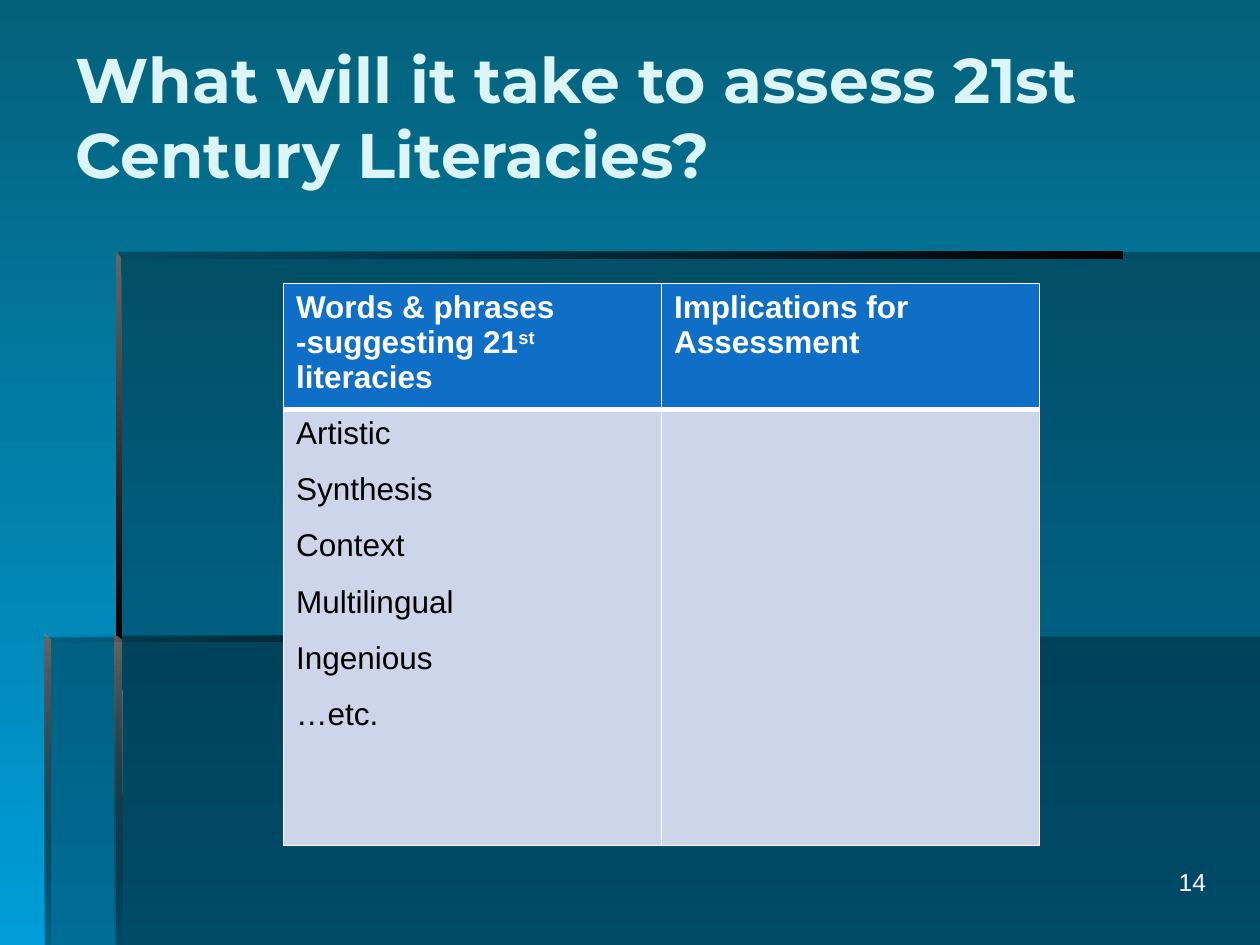
from lxml.etree import SubElement
from pptx import Presentation
from pptx.dml.color import RGBColor
from pptx.enum.text import MSO_ANCHOR, PP_ALIGN
from pptx.oxml.ns import qn
from pptx.util import Inches, Pt

WHITE, BLACK, GREY = "FFFFFF", "000000", "666666"
HEADER_BLUE, BODY_BLUE = "0F6FC6", "CCD5EA"
DOWN, ACROSS = 270, 0

PANELS = [
    [(0.92, 5.05), (0.92, 7.5), (10, 7.5), (10, 5.05)],
    [(0.94, 5.06), (0.36, 5.06), (0.36, 7.5), (10, 7.5), (10, 2), (0.94, 2)],
]
EDGES = [
    ([(0.92, 2), (0.92, 2.05), (8.91, 2.05), (8.91, 2)], BLACK, ACROSS, (0, 100)),
    ([(0.92, 2), (0.92, 5.1), (0.97, 5.1), (0.96, 2.04)], GREY, DOWN, (100, 100)),
    ([(0.91, 7.5), (0.97, 7.5), (0.96, 5.08), (0.91, 5.04)], GREY, DOWN, (100, 0)),
    ([(0.35, 5.04), (0.35, 5.09), (5.35, 5.09), (5.35, 5.04)], BLACK, ACROSS, (0, 100)),
    ([(0.35, 5.04), (0.35, 7.5), (0.4, 7.5), (0.4, 5.09)], GREY, DOWN, (100, 10)),
]
HEADINGS = [
    [("Words & phrases -suggesting 21", 0), ("st ", 30), ("literacies", 0)],
    [("Implications for Assessment", 0)],
]
LITERACIES = ["Artistic", "Synthesis", "Context", "Multilingual", "Ingenious", "…etc."]


def rgb(color):
    return RGBColor.from_string(color)


def fill_solid(fill, color):
    fill.solid()
    fill.fore_color.rgb = rgb(color)


def fill_gradient(fill, colors, angle):
    fill.gradient()
    fill.gradient_angle = angle
    for stop, color, position in zip(fill.gradient_stops, colors, (0, 1)):
        stop.color.rgb = rgb(color)
        stop.position = position


def set_opacity(shape, percents):
    for color, percent in zip(shape._element.spPr.iter(qn("a:srgbClr")), percents):
        SubElement(color, qn("a:alpha"), val=str(percent * 1000))


def add_outline(slide, points):
    corners = [(Inches(x), Inches(y)) for x, y in points]
    builder = slide.shapes.build_freeform(*corners[0])
    builder.add_line_segments(corners[1:], close=True)
    outline = builder.convert_to_shape()
    outline.shadow.inherit = False
    outline.line.fill.background()
    return outline


def add_panel(slide, points):
    panel = add_outline(slide, points)
    fill_solid(panel.fill, BLACK)
    set_opacity(panel, [30])


def add_edge(slide, points, start, angle, opacities):
    edge = add_outline(slide, points)
    fill_gradient(edge.fill, (start, BLACK), angle)
    set_opacity(edge, opacities)


def add_run(paragraph, text, color, baseline=0, **font):
    run = paragraph.add_run()
    run.text = text
    run.font.color.rgb = rgb(color)
    for name, value in {"name": "Arial", "size": Pt(18), "bold": False, **font}.items():
        setattr(run.font, name, value)
    if baseline:
        run._r.get_or_add_rPr().set("baseline", str(baseline * 1000))


def add_label(slide, box, text, color, anchor, align, **font):
    label = slide.shapes.add_textbox(*map(Inches, box)).text_frame
    label.word_wrap = True
    label.vertical_anchor = anchor
    label.paragraphs[0].alignment = align
    add_run(label.paragraphs[0], text, color, **font)


def style_cell(cell, color, borders):
    properties = cell._tc.get_or_add_tcPr()
    for side, width in borders.items():
        border = SubElement(properties, qn(f"a:ln{side}"), w=str(Pt(width)))
        line_fill = SubElement(border, qn("a:solidFill"))
        SubElement(line_fill, qn("a:srgbClr"), val=WHITE)
    fill_solid(cell.fill, color)


def add_literacies_table(slide):
    frame = slide.shapes.add_table(2, 2, *map(Inches, (2.25, 2.25, 6, 4.33)))
    table = frame.table
    for row, height in zip(table.rows, (0.87, 3.46)):
        row.height = Inches(height)
    thin = dict.fromkeys("LRTB", 1)
    for column, heading in enumerate(HEADINGS):
        header, body = table.cell(0, column), table.cell(1, column)
        style_cell(header, HEADER_BLUE, {**thin, "B": 3})
        style_cell(body, BODY_BLUE, {**thin, "T": 3})
        for text, baseline in heading:
            add_run(header.text_frame.paragraphs[0], text, WHITE, baseline, bold=True)
    table.cell(0, 0).text_frame.paragraphs[0].space_after = Pt(12)
    words = table.cell(1, 0).text_frame
    for index, literacy in enumerate(LITERACIES):
        paragraph = words.add_paragraph() if index else words.paragraphs[0]
        paragraph.space_after = Pt(12)
        add_run(paragraph, literacy, BLACK)


def main():
    deck = Presentation()
    deck.slide_width, deck.slide_height = Inches(10), Inches(7.5)
    slide = deck.slides.add_slide(deck.slide_layouts[6])
    fill_gradient(slide.background.fill, ("04617B", "009DD9"), DOWN)
    for points in PANELS:
        add_panel(slide, points)
    for edge in EDGES:
        add_edge(slide, *edge)
    add_label(slide, (0.5, 0.3, 8.75, 1.27),
              "What will it take to assess 21st Century Literacies?", "DBF5F9",
              MSO_ANCHOR.BOTTOM, PP_ALIGN.LEFT,
              name="Montserrat", size=Pt(36), bold=True)
    add_literacies_table(slide)
    add_label(slide, (7.59, 6.83, 2.08, 0.52), "14", WHITE,
              MSO_ANCHOR.TOP, PP_ALIGN.RIGHT, size=Pt(14))
    deck.save("out.pptx")


if __name__ == "__main__":
    main()
